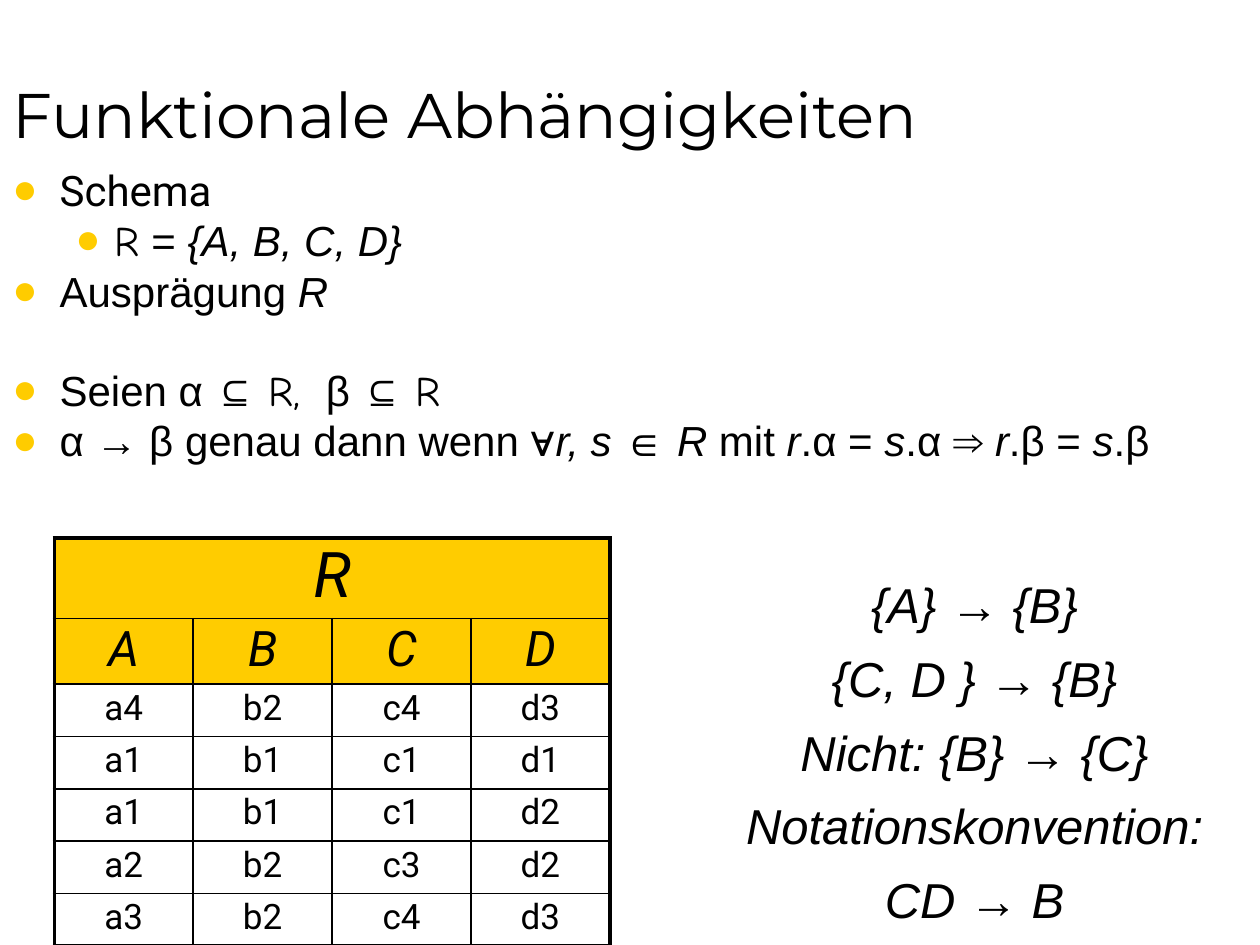
import dataclasses

import lxml.etree
import pptx
import pptx.dml.color
import pptx.enum.text
import pptx.oxml.ns
import pptx.util

Pt = pptx.util.Pt
Anchor = pptx.enum.text.MSO_ANCHOR
Align = pptx.enum.text.PP_ALIGN
qn = pptx.oxml.ns.qn


@dataclasses.dataclass(frozen=True)
class Theme:
    ink: str = "000000"
    accent: str = "FFCC00"
    heading: str = "Montserrat"
    label: str = "Roboto"
    prose: str = "Arial"
    script: str = "Comic Neue"
    title: int = 36
    formula: int = 28
    body: int = 24
    cell: int = 20
    thick: float = 2.25
    thin: float = 1


THEME = Theme()
UPRIGHT = {"font": THEME.prose}
ITALIC = {"font": THEME.prose, "italic": True}
SCRIPT = {"font": THEME.script}
LABEL = {"font": THEME.label}

DEFINITIONS = [
    (0, 5.8, [("Schema", LABEL)]),
    (1, 5.8, [("R", SCRIPT), (" = ", UPRIGHT), ("{A, B, C, D}", ITALIC)]),
    (0, 5.8, [("Ausprägung ", UPRIGHT), ("R", ITALIC)]),
    (0, 33.7, [("Seien α ⊆ ", UPRIGHT), ("R, ", SCRIPT), (" β ⊆ ", UPRIGHT), ("R", SCRIPT)]),
    (0, 5.8, [
        ("α → β genau dann wenn ∀", UPRIGHT), ("r, s", ITALIC), (" ∈ ", UPRIGHT),
        ("R", ITALIC), (" mit ", UPRIGHT), ("r", ITALIC), (".α = ", UPRIGHT),
        ("s", ITALIC), (".α ⇒ ", UPRIGHT), ("r", ITALIC), (".β = ", UPRIGHT),
        ("s", ITALIC), (".β", UPRIGHT),
    ]),
]
INDENTS = [(27, -27), (58.5, -22.5)]
RELATION = [
    ["R"],
    ["A", "B", "C", "D"],
    ["a4", "b2", "c4", "d3"],
    ["a1", "b1", "c1", "d1"],
    ["a1", "b1", "c1", "d2"],
    ["a2", "b2", "c3", "d2"],
    ["a3", "b2", "c4", "d3"],
]
DEPENDENCIES = ["{A} → {B}", "{C, D } → {B}", "Nicht: {B} → {C}", "Notationskonvention:", "CD → B"]


def add_span(para, text, font=THEME.prose, size=THEME.body, italic=False):
    span = para.add_run()
    span.text = text
    span.font.name = font
    span.font.size = Pt(size)
    span.font.italic = italic
    span.font.color.rgb = pptx.dml.color.RGBColor.from_string(THEME.ink)


def add_frame(page, box, anchor=Anchor.TOP):
    frame = page.shapes.add_textbox(*map(Pt, box)).text_frame
    frame.word_wrap = True
    frame.vertical_anchor = anchor
    return frame


def next_para(frame, index, spacing, before, align=Align.LEFT):
    para = frame.add_paragraph() if index else frame.paragraphs[0]
    para.line_spacing = spacing
    para.space_before = Pt(before)
    para.alignment = align
    return para


def set_bullet(para, level):
    margin, indent = INDENTS[level]
    para.level = level
    properties = para._p.get_or_add_pPr()
    properties.set("marL", str(Pt(margin)))
    properties.set("indent", str(Pt(indent)))
    colour = lxml.etree.SubElement(properties, qn("a:buClr"))
    lxml.etree.SubElement(colour, qn("a:srgbClr"), val=THEME.accent)
    lxml.etree.SubElement(properties, qn("a:buFont"), typeface=THEME.prose)
    lxml.etree.SubElement(properties, qn("a:buChar"), char="●")


def set_borders(cell, widths):
    properties = cell._tc.get_or_add_tcPr()
    for index, (side, width) in enumerate(zip("LRTB", widths)):
        line = lxml.etree.Element(qn(f"a:ln{side}"), w=str(Pt(width)))
        fill = lxml.etree.SubElement(line, qn("a:solidFill"))
        lxml.etree.SubElement(fill, qn("a:srgbClr"), val=THEME.ink)
        properties.insert(index, line)


def add_title(page, box):
    frame = add_frame(page, box, Anchor.BOTTOM)
    add_span(frame.paragraphs[0], "Funktionale Abhängigkeiten", font=THEME.heading, size=THEME.title)


def add_definitions(page, box):
    frame = add_frame(page, box)
    for index, (level, before, spans) in enumerate(DEFINITIONS):
        para = next_para(frame, index, 0.8, before)
        set_bullet(para, level)
        for text, style in spans:
            add_span(para, text, **style)


def add_relation(page, box):
    row_count, column_count = len(RELATION), len(RELATION[1])
    table = page.shapes.add_table(row_count, column_count, *map(Pt, box)).table
    table.first_row = table.horz_banding = False
    heights = [46.1, 37.4] + [29.9] * (row_count - 2)
    sizes = [THEME.title, THEME.formula] + [THEME.cell] * (row_count - 2)
    table.cell(0, 0).merge(table.cell(0, column_count - 1))
    for row, texts in enumerate(RELATION):
        table.rows[row].height = Pt(heights[row])
        for column, text in enumerate(texts):
            cell = table.cell(row, column)
            if row < 2:
                cell.fill.solid()
                cell.fill.fore_color.rgb = pptx.dml.color.RGBColor.from_string(THEME.accent)
            else:
                cell.fill.background()
            outer = (column == 0, column == len(texts) - 1, row == 0, row == row_count - 1)
            set_borders(cell, [THEME.thick if edge else THEME.thin for edge in outer])
            para = next_para(cell.text_frame, 0, 0.9, sizes[row] * 0.2, Align.CENTER)
            add_span(para, text, font=THEME.label, size=sizes[row], italic=row < 2)


def add_dependencies(page, box):
    frame = add_frame(page, box)
    for index, text in enumerate(DEPENDENCIES):
        para = next_para(frame, index, 0.8, 15.3, Align.CENTER)
        left, arrow, right = text.partition("→")
        for part, italic in ((left, True), (arrow, False), (right, True)):
            if part:
                add_span(para, part, size=THEME.formula, italic=italic)


def main():
    deck = pptx.Presentation()
    deck.slide_width, deck.slide_height = Pt(720), Pt(540)
    page = deck.slides.add_slide(deck.slide_layouts[6])
    add_title(page, (0, 0, 720, 90))
    add_definitions(page, (0, 95.8, 720, 208))
    add_relation(page, (31, 307.4, 317.5, 233))
    add_dependencies(page, (393.8, 331.2, 326.2, 208.8))
    deck.save("out.pptx")


if __name__ == "__main__":
    main()
